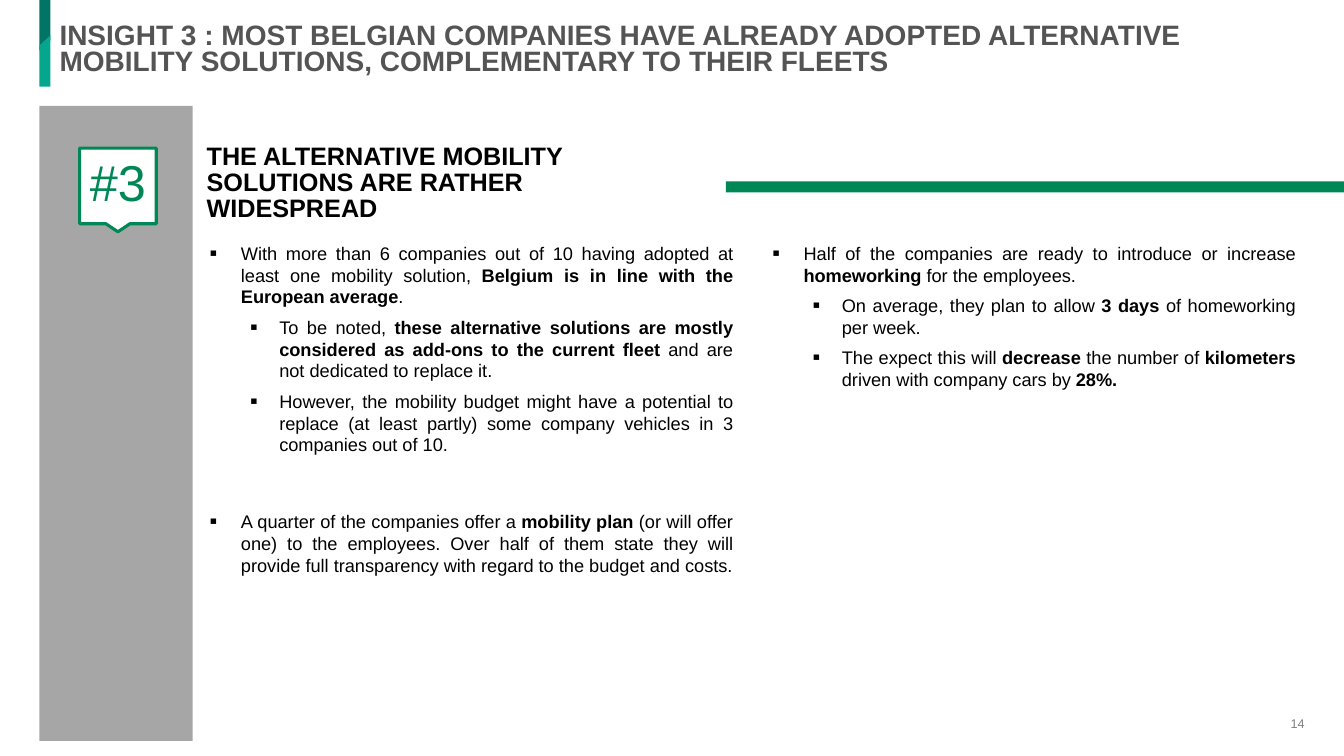
from dataclasses import dataclass

from lxml.etree import SubElement
from pptx import Presentation
from pptx.dml.color import RGBColor
from pptx.enum.shapes import MSO_SHAPE
from pptx.enum.text import MSO_ANCHOR, MSO_AUTO_SIZE, PP_ALIGN
from pptx.oxml.ns import qn
from pptx.util import Inches, Pt

COLORS = {
    "panel": "A6A6A6",
    "dark_teal": "007466",
    "teal": "05A68E",
    "green": "008756",
    "title": "545454",
    "text": "000000",
    "page": "808080",
    "white": "FFFFFF",
}
FONT = "Arial"


@dataclass(frozen=True)
class Box:
    left: float
    top: float
    width: float
    height: float

    def lengths(self) -> tuple:
        return tuple(Inches(v) for v in (self.left, self.top, self.width, self.height))


@dataclass(frozen=True)
class Block:
    box: Box
    color: str
    preset: MSO_SHAPE = MSO_SHAPE.RECTANGLE
    rotation: float = 0


@dataclass(frozen=True)
class Style:
    size: float
    color: str
    bold: bool = False
    align: PP_ALIGN = PP_ALIGN.LEFT
    line_spacing: float = 1.0


@dataclass(frozen=True)
class Label:
    box: Box
    text: str
    style: Style
    anchor: MSO_ANCHOR = MSO_ANCHOR.TOP
    wrap: bool = True


@dataclass(frozen=True)
class Bullet:
    """One list item; every second piece of its text is bold."""
    pieces: tuple[str, ...]
    level: int = 0
    space_before: float = 0


BLOCKS = (
    Block(Box(0.39, 1.05, 1.52, 6.3), "panel"),
    Block(Box(0.39, -0.01, 0.11, 0.51), "dark_teal", MSO_SHAPE.FLOWCHART_MANUAL_INPUT, 180),
    Block(Box(0.39, 0.35, 0.11, 0.51), "teal", MSO_SHAPE.FLOWCHART_MANUAL_INPUT),
    Block(Box(7.2, 1.8, 6.13, 0.11), "green"),
)
# Whole hundredths of an inch, because the freeform builder rounds its points
BADGE_OUTLINE = ((155, 147), (79, 147), (79, 222), (105, 222),
                 (117, 230), (129, 222), (155, 222))
BADGE_UNIT = Inches(0.01)

TITLE_BOX = Box(0.39, 0.23, 12.55, 0.54)
TITLE = ("INSIGHT 3 : MOST BELGIAN COMPANIES HAVE ALREADY ADOPTED ALTERNATIVE "
         "MOBILITY SOLUTIONS, COMPLEMENTARY TO THEIR FLEETS")
TITLE_STYLE = Style(20, "title", bold=True, line_spacing=0.8)

LABELS = (
    Label(Box(2.05, 1.44, 4.8, 0.73),
          "THE ALTERNATIVE MOBILITY SOLUTIONS ARE RATHER WIDESPREAD",
          Style(18, "text", bold=True, line_spacing=0.85)),
    Label(Box(0.89, 1.59, 0.56, 0.51), "#3",
          Style(36, "green", align=PP_ALIGN.CENTER, line_spacing=0.85), wrap=False),
    Label(Box(12.71, 7.1, 0.23, 0.15), "14",
          Style(9, "page", align=PP_ALIGN.RIGHT), MSO_ANCHOR.MIDDLE, wrap=False),
)

BULLET_STYLE = Style(13, "text", align=PP_ALIGN.JUSTIFY)
BULLET_INDENTS = ((0.31, -0.31), (0.69, -0.29))
COLUMN_LEFT, COLUMN_TOP, COLUMN_WIDTH, COLUMN_HEIGHT, COLUMN_GAP = 2.08, 2.4, 5.19, 3.95, 0.39
COLUMNS = (
    (
        Bullet(("With more than 6 companies out of 10 having adopted at least one mobility solution, ",
                "Belgium is in line with the European average", ".")),
        Bullet(("To be noted, ",
                "these alternative solutions are mostly considered as add-ons to the current fleet ",
                "and are not dedicated to replace it."), 1, 6),
        Bullet(("However, the mobility budget might have a potential to replace (at least partly) "
                "some company vehicles in 3 companies out of 10.",), 1, 6),
        Bullet(("A quarter of the companies offer a ", "mobility plan ",
                "(or will offer one) to the employees. Over half of them state they will provide "
                "full transparency with regard to the budget and costs."), 0, 39),
    ),
    (
        Bullet(("Half of the companies are ready to introduce or increase ",
                "homeworking", " for the employees.")),
        Bullet(("On average, they plan to allow ", "3 days ", "of homeworking per week."), 1, 6),
        Bullet(("The expect this will ", "decrease", " the number of ", "kilometers",
                " driven with company cars by ", "28%."), 1, 6),
    ),
)


def rgb(name: str) -> RGBColor:
    return RGBColor.from_string(COLORS[name])


def place(shape, box: Box) -> None:
    shape.left, shape.top, shape.width, shape.height = box.lengths()


def prepare_frame(frame, anchor=MSO_ANCHOR.TOP, wrap=True, left_inset=0.0) -> None:
    frame.auto_size = MSO_AUTO_SIZE.NONE
    frame.word_wrap = wrap
    frame.vertical_anchor = anchor
    frame.margin_left = Inches(left_inset)
    frame.margin_top = frame.margin_right = frame.margin_bottom = 0


def format_paragraph(paragraph, style: Style, space_before: float = 0) -> None:
    paragraph.alignment = style.align
    paragraph.line_spacing = style.line_spacing
    paragraph.space_before = Pt(space_before)
    paragraph.space_after = Pt(0)


def add_run(paragraph, text: str, style: Style, bold: bool) -> None:
    run = paragraph.add_run()
    run.text = text
    run.font.name = FONT
    run.font.size = Pt(style.size)
    run.font.bold = bold
    run.font.color.rgb = rgb(style.color)


def write_line(frame, text: str, style: Style) -> None:
    paragraph = frame.paragraphs[0]
    format_paragraph(paragraph, style)
    add_run(paragraph, text, style, style.bold)


def fill_shape(shape, color: str) -> None:
    shape.shadow.inherit = False
    shape.fill.solid()
    shape.fill.fore_color.rgb = rgb(color)


def add_block(slide, block: Block) -> None:
    shape = slide.shapes.add_shape(block.preset, *block.box.lengths())
    shape.rotation = block.rotation
    fill_shape(shape, block.color)
    shape.line.fill.background()


def add_badge(slide) -> None:
    start, *corners = BADGE_OUTLINE
    builder = slide.shapes.build_freeform(*start, scale=BADGE_UNIT)
    builder.add_line_segments(corners, close=True)
    badge = builder.convert_to_shape()
    fill_shape(badge, "white")
    badge.line.color.rgb = rgb("green")
    badge.line.width = Pt(2.25)


def add_label(slide, label: Label) -> None:
    frame = slide.shapes.add_textbox(*label.box.lengths()).text_frame
    prepare_frame(frame, label.anchor, label.wrap)
    write_line(frame, label.text, label.style)


def set_bullet(paragraph, level: int) -> None:
    margin, indent = BULLET_INDENTS[level]
    paragraph.level = level
    properties = paragraph._p.get_or_add_pPr()
    properties.set("marL", str(Inches(margin)))
    properties.set("indent", str(Inches(indent)))
    SubElement(properties, qn("a:buSzPct"), val="120000")
    SubElement(properties, qn("a:buFont"), typeface=FONT)
    SubElement(properties, qn("a:buChar"), char="▪")


def fill_column(placeholder, box: Box, bullets: tuple[Bullet, ...]) -> None:
    place(placeholder, box)
    frame = placeholder.text_frame
    prepare_frame(frame)
    for number, bullet in enumerate(bullets):
        paragraph = frame.add_paragraph() if number else frame.paragraphs[0]
        set_bullet(paragraph, bullet.level)
        format_paragraph(paragraph, BULLET_STYLE, bullet.space_before)
        for position, piece in enumerate(bullet.pieces):
            add_run(paragraph, piece, BULLET_STYLE, bold=position % 2 == 1)


def main() -> None:
    presentation = Presentation()
    presentation.slide_width, presentation.slide_height = Inches(13.33), Inches(7.5)
    slide = presentation.slides.add_slide(presentation.slide_layouts.get_by_name("Two Content"))

    for block in BLOCKS:
        add_block(slide, block)
    add_badge(slide)

    title = slide.shapes.title
    place(title, TITLE_BOX)
    prepare_frame(title.text_frame, MSO_ANCHOR.MIDDLE, left_inset=0.2)
    write_line(title.text_frame, TITLE, TITLE_STYLE)

    for number, bullets in enumerate(COLUMNS):
        left = COLUMN_LEFT + number * (COLUMN_WIDTH + COLUMN_GAP)
        box = Box(left, COLUMN_TOP, COLUMN_WIDTH, COLUMN_HEIGHT)
        fill_column(slide.placeholders[number + 1], box, bullets)
    for label in LABELS:
        add_label(slide, label)

    presentation.save("out.pptx")


if __name__ == "__main__":
    main()
